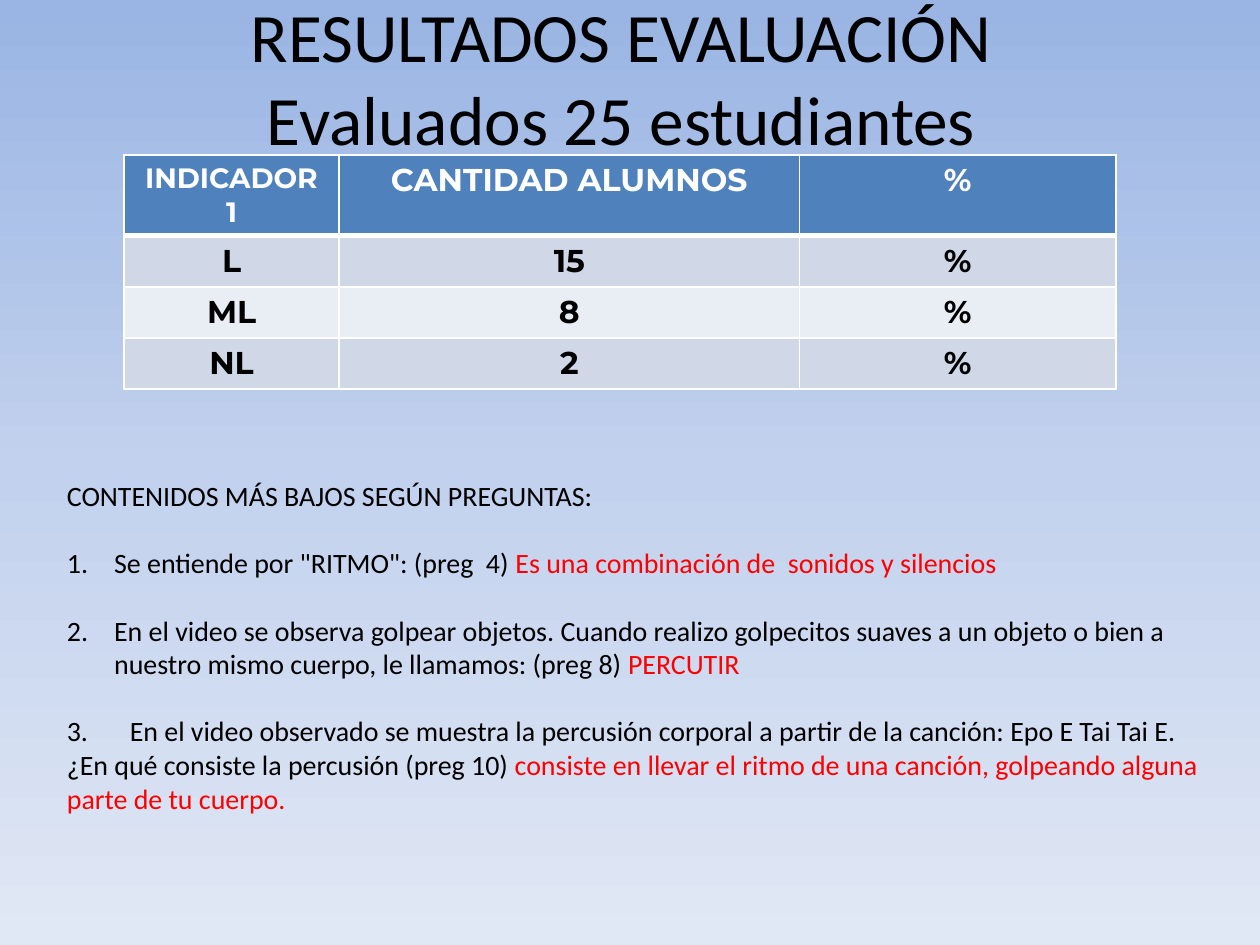
from copy import deepcopy

from lxml.etree import SubElement
from pptx import Presentation
from pptx.dml.color import RGBColor
from pptx.enum.text import MSO_ANCHOR, MSO_AUTO_SIZE, PP_ALIGN
from pptx.oxml.ns import qn
from pptx.util import Pt

BACKGROUND = [(0, "9AB5E4"), (0.5, "C2D1ED"), (1, "E1E8F5")]
BLACK, WHITE, RED = "000000", "FFFFFF", "FF0000"
HEADER, BANDS = "4F81BD", ("E9EDF4", "D0D8E8")

HEADING = "RESULTADOS EVALUACIÓN\vEvaluados 25 estudiantes"
RESULTS = [
    ("INDICADOR 1", "CANTIDAD ALUMNOS", "%"),
    ("L", "15", "%"),
    ("ML", "8", "%"),
    ("NL", "2", "%"),
]
COLUMN_WIDTHS = (123, 263, 181)
QUESTIONS = [
    ("plain", "CONTENIDOS MÁS BAJOS SEGÚN PREGUNTAS:", ""),
    ("numbered", 'Se entiende por "RITMO": (preg  4) ',
     "Es una combinación de  sonidos y silencios"),
    ("numbered", "En el video se observa golpear objetos. Cuando realizo golpecitos suaves "
     "a un objeto o bien a nuestro mismo cuerpo, le llamamos: (preg 8) ", "PERCUTIR"),
    ("tabbed", "3.\tEn el video observado se muestra la percusión corporal a partir de la "
     "canción: Epo E Tai Tai E. ¿En qué consiste la percusión (preg 10) ",
     "consiste en llevar el ritmo de una canción, golpeando alguna parte de tu cuerpo."),
]


def rgb(value):
    return RGBColor.from_string(value)


def format_font(font, color, **values):
    font.color.rgb = rgb(color)
    for name, value in values.items():
        setattr(font, name, value)


def place(placeholder, box):
    for name, value in zip(("left", "top", "width", "height"), box):
        setattr(placeholder, name, Pt(value))
    placeholder.text_frame.word_wrap = True
    placeholder.text_frame.auto_size = MSO_AUTO_SIZE.NONE


def paint_background(slide):
    fill = slide.background.fill
    fill.gradient()
    fill.gradient_angle = 270
    stop_list = slide.element.find(".//" + qn("a:gsLst"))
    stop_list.append(deepcopy(stop_list[-1]))
    for stop, (position, color) in zip(fill.gradient_stops, BACKGROUND):
        stop.position = position
        stop.color.rgb = rgb(color)


def add_heading(slide, box):
    title = slide.shapes.title
    place(title, box)
    title.text_frame.vertical_anchor = MSO_ANCHOR.MIDDLE
    title.text_frame.text = HEADING
    paragraph = title.text_frame.paragraphs[0]
    paragraph.alignment = PP_ALIGN.CENTER
    for run in paragraph.runs:
        format_font(run.font, BLACK, size=Pt(39.6), name="Calibri")


def add_borders(cell, widths):
    properties = cell._tc.get_or_add_tcPr()
    for side, width in widths.items():
        line = SubElement(properties, qn(f"a:ln{side}"), w=str(Pt(width)))
        color = SubElement(SubElement(line, qn("a:solidFill")), qn("a:srgbClr"))
        color.set("val", WHITE)


def add_results(slide, box):
    left, top, width, height = map(Pt, box)
    table = slide.shapes.add_table(len(RESULTS), len(COLUMN_WIDTHS), left, top, width, height).table
    for column, column_width in zip(table.columns, COLUMN_WIDTHS):
        column.width = Pt(column_width)
    for r, values in enumerate(RESULTS):
        table.rows[r].height = Pt(29.2 if r else 46)
        for c, value in enumerate(values):
            cell = table.cell(r, c)
            add_borders(cell, {"L": 1, "R": 1, "T": 3 if r == 1 else 1, "B": 1 if r else 3})
            cell.fill.solid()
            cell.fill.fore_color.rgb = rgb(BANDS[r % 2] if r else HEADER)
            cell.text = value
            paragraph = cell.text_frame.paragraphs[0]
            paragraph.alignment = PP_ALIGN.CENTER
            format_font(paragraph.runs[0].font, BLACK if r else WHITE, bold=True,
                        name="Montserrat", size=Pt(16 if r == c == 0 else 18))


def set_list_style(paragraph, style):
    properties = paragraph._p.get_or_add_pPr()
    indent = Pt(27) if style == "numbered" else 0
    properties.set("marL", str(indent))
    properties.set("indent", str(-indent))
    if style == "numbered":
        SubElement(properties, qn("a:buFont"), typeface="Calibri")
        SubElement(properties, qn("a:buAutoNum"), type="arabicPeriod")
    else:
        SubElement(properties, qn("a:buNone"))
    if style == "tabbed":
        tabs = SubElement(properties, qn("a:tabLst"))
        SubElement(tabs, qn("a:tab"), pos=str(Pt(30)), algn="l")


def add_questions(slide, box):
    body = slide.placeholders[1]
    place(body, box)
    frame = body.text_frame
    frame.vertical_anchor = MSO_ANCHOR.TOP
    for i, (style, question, answer) in enumerate(QUESTIONS):
        paragraph = frame.add_paragraph() if i else frame.paragraphs[0]
        paragraph.space_before = Pt(19.2 if i else 0)
        set_list_style(paragraph, style)
        for text, color in ((question, BLACK), (answer, RED)):
            if text:
                run = paragraph.add_run()
                run.text = text
                format_font(run.font, color, size=Pt(16), name="Calibri")


def main():
    presentation = Presentation()
    presentation.slide_width, presentation.slide_height = Pt(720), Pt(540)
    slide = presentation.slides.add_slide(presentation.slide_layouts[1])
    paint_background(slide)
    add_heading(slide, (31, 15, 648, 57))
    add_results(slide, (70.8, 88.6, sum(COLUMN_WIDTHS), 133.6))
    add_questions(slide, (31, 270, 666, 252))
    presentation.save("out.pptx")


if __name__ == "__main__":
    main()
